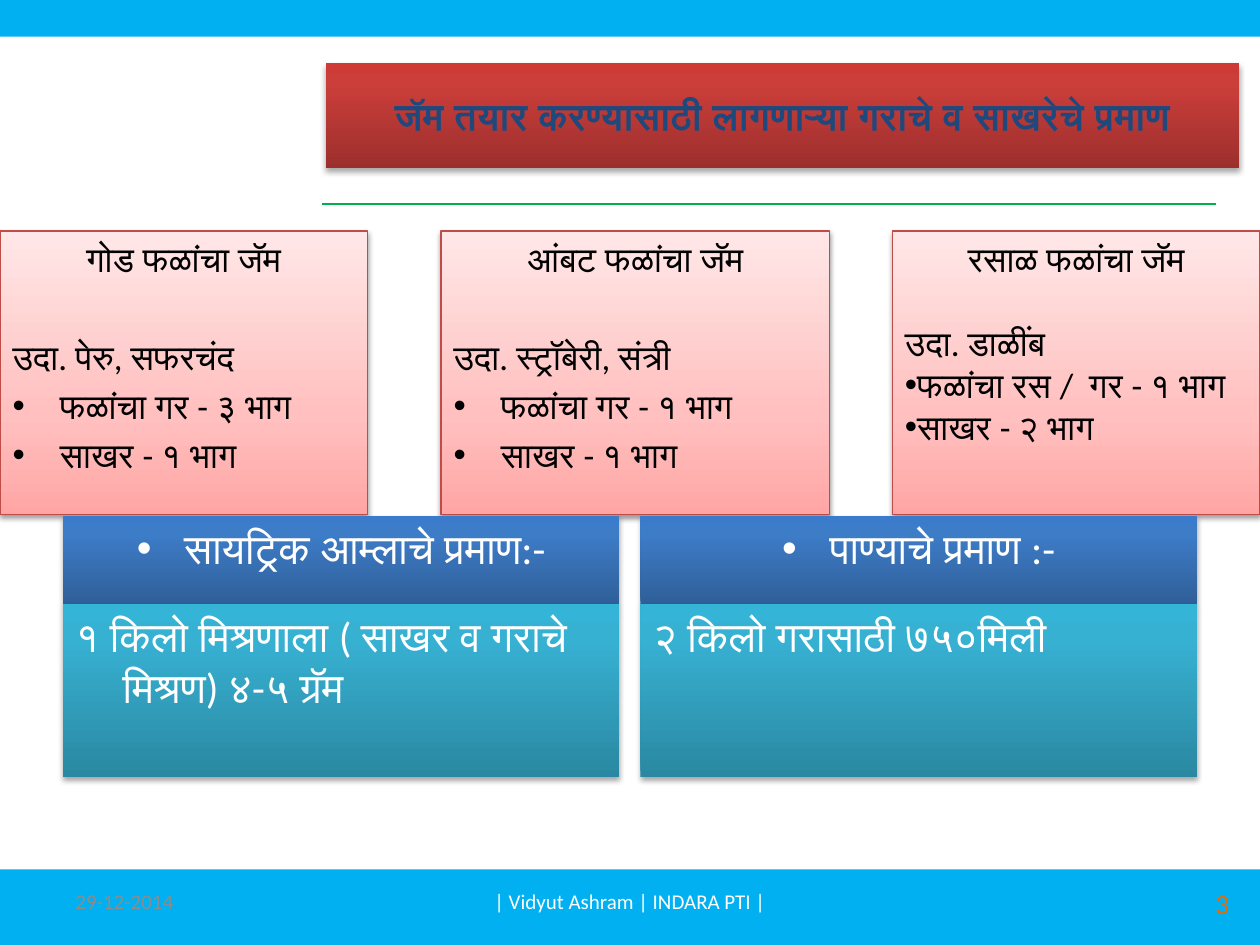
from dataclasses import dataclass
from lxml.etree import SubElement as Sub
from pptx import Presentation
from pptx.dml.color import RGBColor as RGB
from pptx.enum.shapes import MSO_CONNECTOR as Conn, MSO_SHAPE as Shape
from pptx.enum.text import MSO_ANCHOR as Anchor, MSO_AUTO_SIZE as Fit, PP_ALIGN as Align
from pptx.oxml.ns import qn
from pptx.util import Pt


@dataclass(frozen=True)
class Theme:
    font: str = "Calibri"
    bar: str = "00B0F0"
    rule: str = "00B050"
    edge: str = "BF4C48"
    navy: str = "1F497D"
    black: str = "000000"
    white: str = "FFFFFF"
    gray: str = "8C8C8C"
    orange: str = "E46C0A"
    red: tuple = ((0, "9C2F2D"), (80, "CB3E3A"), (100, "CE3B37"))
    pink: tuple = ((0, "FFA6A5"), (35, "FFC0BF"), (100, "FFE7E7"))
    blue: tuple = ((0, "2F5F99"), (80, "3D7CC7"), (100, "3A7CCB"))
    teal: tuple = ((0, "2A88A2"), (80, "37B1D2"), (100, "34B4D6"))
    head: float = 21.6
    card: float = 20
    fact: float = 24
    foot: float = 12
    page: float = 16


T = Theme()
WIDE, HIGH = 720, 540
HANG = 27

TITLE = "जॅम तयार करण्यासाठी लागणाऱ्या गराचे व साखरेचे प्रमाण"
# left, width, hanging indent, space before, gap under the heading, lines
CARDS = [
    (0, 210, HANG, 4, 32,
     ["गोड फळांचा जॅम", "उदा. पेरु, सफरचंद", "फळांचा गर - ३ भाग", "साखर - १ भाग"]),
    (252, 222, HANG, 4, 32,
     ["आंबट फळांचा जॅम", "उदा. स्ट्रॉबेरी, संत्री", "फळांचा गर - १ भाग", "साखर - १ भाग"]),
    (510, 210, 0, 0, 24,
     ["रसाळ फळांचा जॅम", "उदा. डाळींब", "फळांचा रस /  गर - १ भाग", "साखर - २ भाग"]),
]
FACTS = [
    ("सायट्रिक आम्लाचे प्रमाण:-", "१ किलो मिश्रणाला ( साखर व गराचे मिश्रण) ४-५ ग्रॅम"),
    ("पाण्याचे प्रमाण :-", "२ किलो गरासाठी ७५०मिली"),
]
FOOT = [
    ((36, 500.4, 168, 28.8), "29-12-2014", Align.LEFT, T.foot, T.gray),
    ((541.5, 501.8, 168, 28.8), "3", Align.RIGHT, T.page, T.orange),
    ((246, 500.4, 228, 28.8), "| Vidyut Ashram | INDARA PTI |", Align.CENTER, T.foot, T.white),
]


def place(shape, box):
    shape.left, shape.top, shape.width, shape.height = map(Pt, box)


def rect(box):
    shape = slide.shapes.add_shape(Shape.RECTANGLE, *map(Pt, box))
    shape.shadow.inherit = False
    shape.line.fill.background()
    return shape


def paint(shape, stops, alpha=35, dist=1.8, edge=None):
    """Fill with a vertical gradient and cast a soft shadow below."""
    shape.fill.gradient()
    shape.fill.gradient_angle = 90
    props = shape.fill._xPr
    ramp = props.find(qn("a:gradFill")).find(qn("a:gsLst"))
    for old in list(ramp):
        ramp.remove(old)
    for pos, tint in stops:
        stop = Sub(ramp, qn("a:gs"), pos=str(pos * 1000))
        Sub(stop, qn("a:srgbClr"), val=tint)
    if edge:
        shape.line.color.rgb = RGB.from_string(edge)
        shape.line.width = Pt(0.75)
    else:
        shape.line.fill.background()
    shape.shadow.inherit = False
    cast = Sub(props.find(qn("a:effectLst")), qn("a:outerShdw"),
               blurRad=str(Pt(3.1)), dist=str(Pt(dist)), dir="5400000", rotWithShape="0")
    tint = Sub(cast, qn("a:srgbClr"), val=T.black)
    Sub(tint, qn("a:alpha"), val=str(alpha * 1000))


def style(para, text, size, tint, align=Align.LEFT, hang=0, bullet=False, before=0, bold=False):
    para.text = text
    para.alignment = align
    para.space_before = Pt(before)
    props = para._p.get_or_add_pPr()
    props.set("marL", str(Pt(hang)))
    props.set("indent", str(-Pt(hang)))
    if bullet:
        Sub(props, qn("a:buFont"), typeface="Arial")
        Sub(props, qn("a:buChar"), char="•")
    else:
        Sub(props, qn("a:buNone"))
    font = para.font
    font.name, font.size, font.bold = T.font, Pt(size), bold
    font.color.rgb = RGB.from_string(tint)


def frame(shape, anchor):
    body = shape.text_frame
    body.word_wrap = True
    body.auto_size = Fit.NONE
    body.vertical_anchor = anchor
    return body


deck = Presentation()
deck.slide_width, deck.slide_height = Pt(WIDE), Pt(HIGH)
slide = deck.slides.add_slide(deck.slide_layouts[3])
title, *bodies = slide.placeholders

for box in ((0, 496.8, WIDE, 43.2), (0, 0, WIDE, 20.9)):
    bar = rect(box)
    bar.fill.solid()
    bar.fill.fore_color.rgb = RGB.from_string(T.bar)

rule = slide.shapes.add_connector(Conn.STRAIGHT, Pt(184.3), Pt(116.6), Pt(694.8), Pt(116.6))
rule.line.color.rgb = RGB.from_string(T.rule)
rule.line.width = Pt(0.75)
Sub(rule._element.spPr, qn("a:effectLst"))

place(title, (186, 36, 522, 60))
paint(title, T.red)
style(frame(title, Anchor.MIDDLE).paragraphs[0], TITLE, T.head, T.navy, Align.CENTER, bold=True)

for i, (left, width, hang, before, gap, lines) in enumerate(CARDS):
    box = (left, 132, width, 162)
    if i < len(bodies):
        card = bodies[i]
        place(card, box)
    else:
        card = rect(box)
    paint(card, T.pink, 38, 1.6, T.edge)
    body = frame(card, Anchor.TOP)
    for n, text in enumerate(lines):
        para = body.add_paragraph() if n else body.paragraphs[0]
        style(para, text, T.card, T.black, hang=hang, bullet=n > 1,
              align=Align.LEFT if n else Align.CENTER,
              before=(0, gap, before, before)[n])

for i, (head, text) in enumerate(FACTS):
    left = 36 + i * 330
    top = rect((left, 295, 318, 50.4))
    paint(top, T.blue)
    style(frame(top, Anchor.TOP).paragraphs[0], head, T.fact, T.white,
          Align.CENTER, HANG, bullet=True)
    base = rect((left, 345.4, 318, 98.6))
    paint(base, T.teal)
    style(frame(base, Anchor.TOP).paragraphs[0], text, T.fact, T.white, hang=HANG)

for box, text, align, size, tint in FOOT:
    note = slide.shapes.add_textbox(*map(Pt, box))
    style(frame(note, Anchor.MIDDLE).paragraphs[0], text, size, tint, align)

deck.save("out.pptx")
